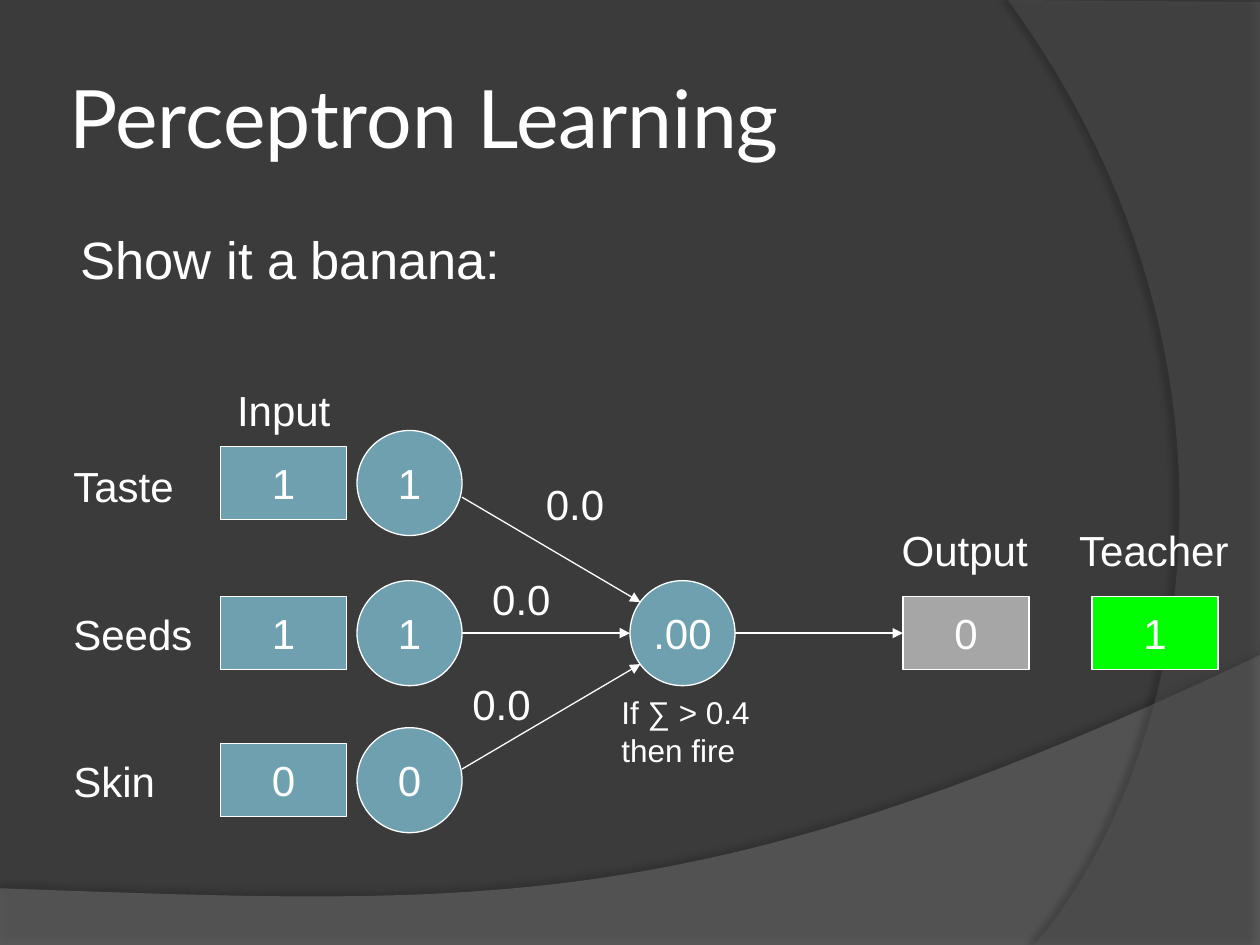
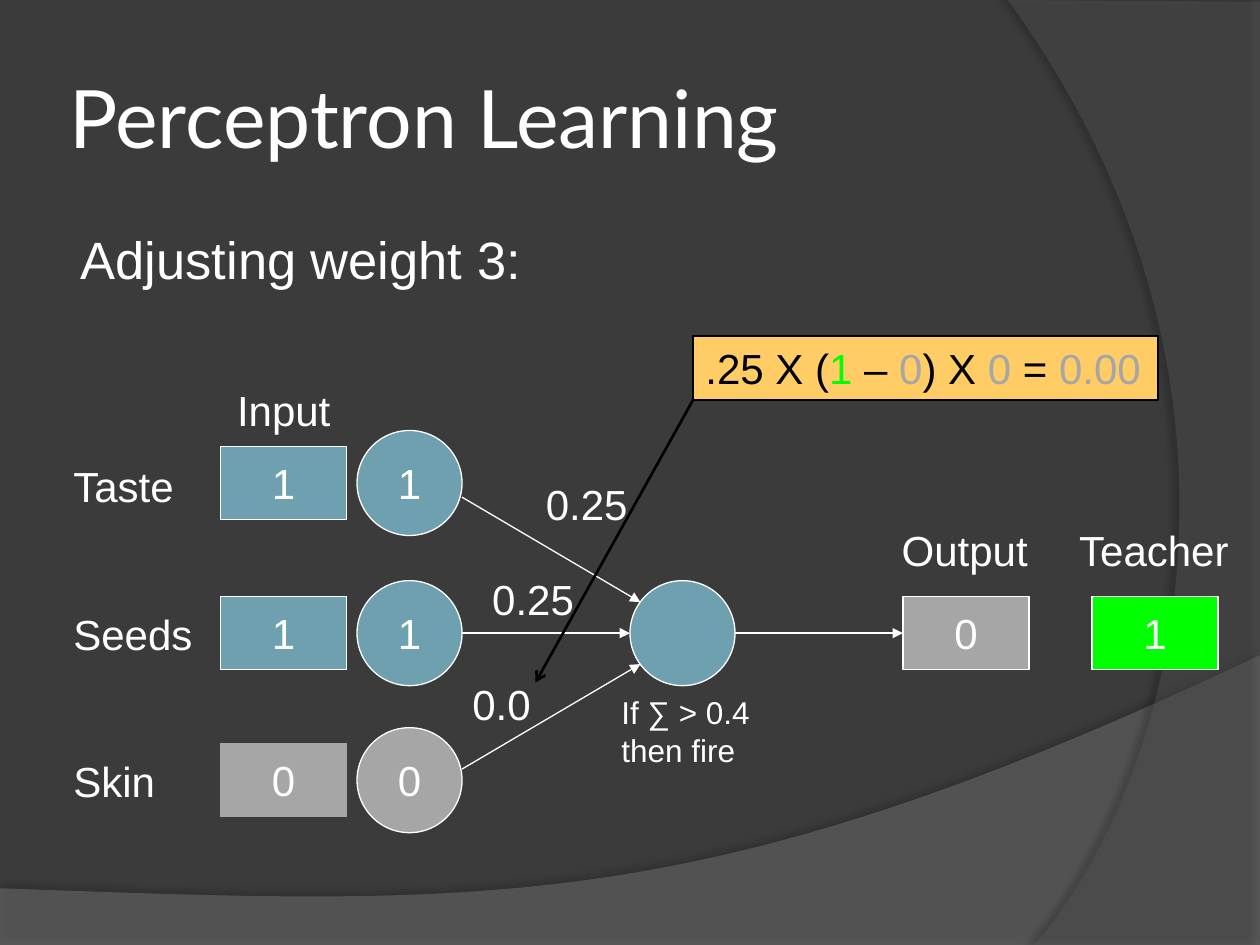
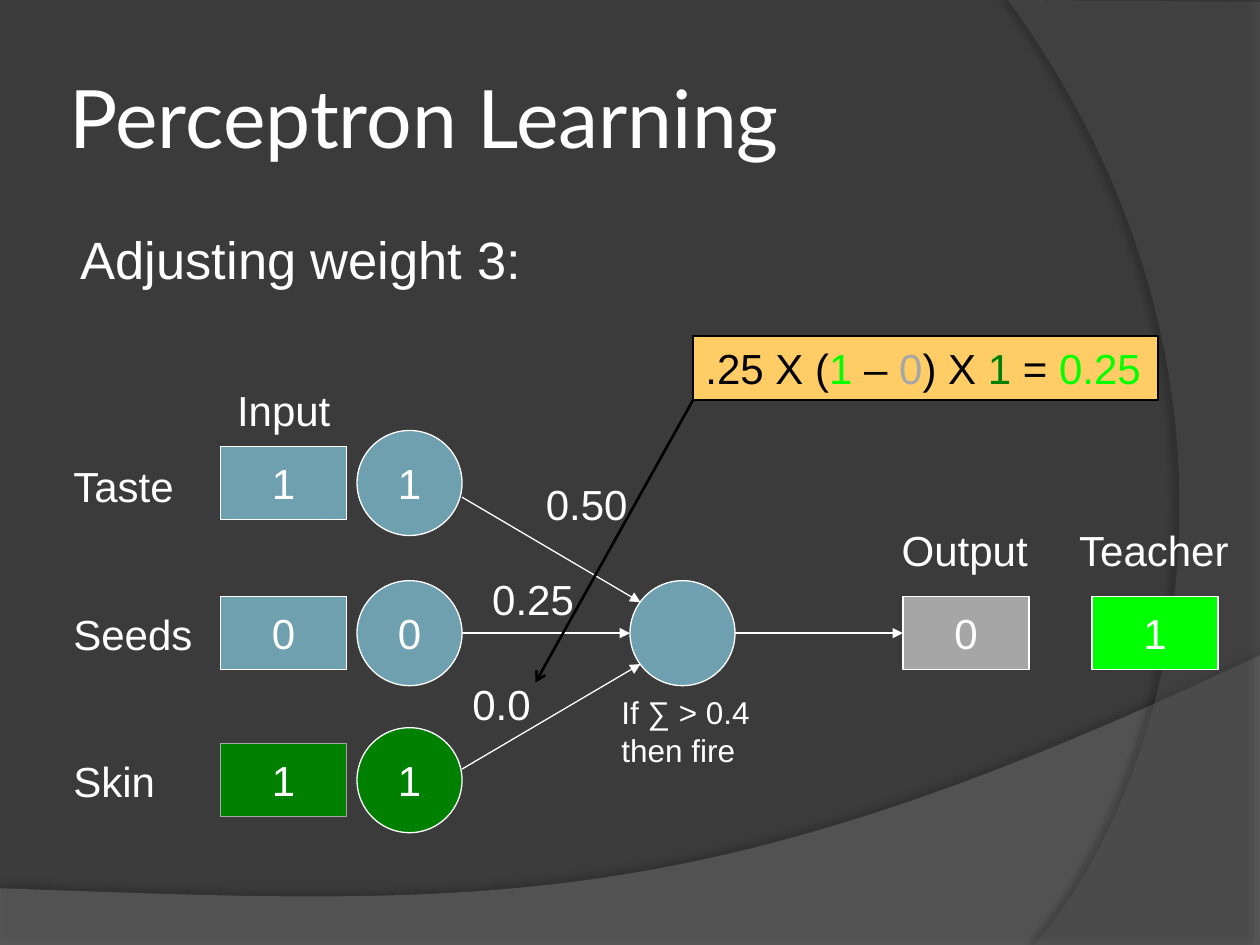
from dataclasses import dataclass

import pptx
import pptx.dml.color
import pptx.enum.dml
import pptx.enum.shapes
import pptx.enum.text
import pptx.oxml
import pptx.oxml.ns
import pptx.util

SHAPES = pptx.enum.shapes.MSO_SHAPE
ALIGN = pptx.enum.text.PP_ALIGN
ANCHOR = pptx.enum.text.MSO_ANCHOR
AUTO_SIZE = pptx.enum.text.MSO_AUTO_SIZE


@dataclass(frozen=True)
class Theme:
    background: str = "3B3B3B"
    lower_band: str = "7C7C7C"
    right_band: str = "595959"
    white: str = "FFFFFF"
    black: str = "000000"
    node: str = "6EA0B0"
    off: str = "A6A6A6"
    on: str = "00FF00"
    active: str = "008000"
    note: str = "FFCC66"
    title_font: str = "Lato"
    body_font: str = "Arial"
    title_size: int = 46
    body_size: int = 30
    label_size: int = 24
    small_size: int = 18
    thin: float = 0.75
    thick: float = 1.5


# Grid of 120 columns by 90 rows: one cell is a twelfth of an inch
COLUMNS, ROWS = 120, 90
CELL = pptx.util.Inches(1) // 12


def cells(*lengths):
    return [round(length * CELL) for length in lengths]


def rgb(colour):
    return pptx.dml.color.RGBColor.from_string(colour)


def add_xml(parent, xml):
    """Append a drawing element written without its namespace declaration."""
    tag, rest = xml[:-1].split(" ", 1) if " " in xml else (xml[:-2], "/")
    namespace = pptx.oxml.ns.nsdecls("a")
    element = pptx.oxml.parse_xml(f"{tag} {namespace} {rest}>")
    parent.append(element)
    return element


def curve(start, first, second, end, steps=48):
    """Points along a cubic curve, without its start."""
    points = []
    for step in range(1, steps + 1):
        t = step / steps
        weights = ((1 - t) ** 3, 3 * t * (1 - t) ** 2, 3 * t * t * (1 - t), t ** 3)
        points.append(tuple(
            sum(weight * point[axis] for weight, point
                in zip(weights, (start, first, second, end)))
            for axis in (0, 1)))
    return points


class Deck:
    def __init__(self, theme):
        self.theme = theme
        self.presentation = pptx.Presentation()
        self.presentation.slide_width, self.presentation.slide_height = cells(COLUMNS, ROWS)
        self.master = self.presentation.slide_master
        fill = self.master.background.fill
        fill.solid()
        fill.fore_color.rgb = rgb(theme.background)
        self.slide = None

    def new_slide(self, title, lead):
        layout = self.presentation.slide_layouts.get_by_name("Title and Content")
        self.slide = self.presentation.slides.add_slide(layout)
        self.placeholder(self.slide.shapes.title, title, (6, 3.6, 98, 15),
                         self.theme.title_size, self.theme.title_font)
        frame = self.slide.shapes.title.text_frame
        frame.vertical_anchor = ANCHOR.MIDDLE
        frame.margin_left = frame.margin_right = pptx.util.Inches(0.05)
        body = self.slide.placeholders[1]
        self.placeholder(body, lead, (6, 21, 98, 59.4), self.theme.body_size)
        properties = body.text_frame.paragraphs[0]._p.get_or_add_pPr()
        properties.set("marL", str(pptx.util.Inches(0.46)))
        properties.set("indent", str(pptx.util.Inches(-0.42)))
        properties.insert(0, add_xml(properties, "<a:buNone/>"))

    def placeholder(self, shape, text, box, size, font=None):
        shape.left, shape.top, shape.width, shape.height = cells(*box)
        shape.text_frame.text = text
        shape.text_frame.auto_size = AUTO_SIZE.NONE
        paragraph = shape.text_frame.paragraphs[0]
        paragraph.alignment = ALIGN.LEFT
        self.style(paragraph, size, font=font)

    def style(self, paragraph, size, colour=None, font=None):
        paragraph.font.size = pptx.util.Pt(size)
        paragraph.font.name = font or self.theme.body_font
        paragraph.font.color.rgb = rgb(colour or self.theme.white)

    def paint(self, shape, fill, line):
        shape.shadow.inherit = False
        shape.fill.solid()
        shape.fill.fore_color.rgb = rgb(fill)
        shape.line.color.rgb = rgb(line or self.theme.white)
        shape.line.width = pptx.util.Pt(self.theme.thin)

    def node(self, kind, box, text, fill, line=None):
        shape = self.slide.shapes.add_shape(kind, *cells(*box))
        self.paint(shape, fill, line)
        if text:
            frame = shape.text_frame
            frame.text = text
            frame.word_wrap = False
            frame.vertical_anchor = ANCHOR.MIDDLE
            frame.paragraphs[0].alignment = ALIGN.CENTER
            self.style(frame.paragraphs[0], self.theme.label_size)
        return shape

    def label(self, lines, left, top, width, height=6, size=None):
        box = self.slide.shapes.add_textbox(*cells(left, top, width, height))
        frame = box.text_frame
        frame.text = "\n".join(lines)
        frame.word_wrap = False
        frame.auto_size = AUTO_SIZE.SHAPE_TO_FIT_TEXT
        for paragraph in frame.paragraphs:
            self.style(paragraph, size or self.theme.label_size)

    def formula(self, parts, box):
        shape = self.slide.shapes.add_shape(SHAPES.RECTANGLE, *cells(*box))
        self.paint(shape, self.theme.note, self.theme.black)
        frame = shape.text_frame
        frame.word_wrap = False
        frame.auto_size = AUTO_SIZE.SHAPE_TO_FIT_TEXT
        frame.vertical_anchor = ANCHOR.TOP
        paragraph = frame.paragraphs[0]
        paragraph.alignment = ALIGN.LEFT
        self.style(paragraph, self.theme.label_size, self.theme.black)
        for text, colour in parts:
            run = paragraph.add_run()
            run.text = text
            run.font.color.rgb = rgb(colour)

    def arrow(self, start, end, colour=None, width=None, head="triangle"):
        connector = self.slide.shapes.add_connector(
            pptx.enum.shapes.MSO_CONNECTOR.STRAIGHT, *cells(*start, *end))
        connector.line.color.rgb = rgb(colour or self.theme.white)
        connector.line.width = pptx.util.Pt(width or self.theme.thin)
        add_xml(connector.line._get_or_add_ln(), f'<a:tailEnd type="{head}"/>')
        add_xml(connector._element.spPr, "<a:effectLst/>")
        return connector

    def master_band(self, points, colour, opacity, shadow):
        """Draw a translucent band and move it behind everything on the master."""
        builder = self.slide.shapes.build_freeform(*cells(*points[0]))
        builder.add_line_segments([cells(*point) for point in points[1:]])
        band = builder.convert_to_shape()
        band.fill.solid()
        band.fill.fore_color.rgb = rgb(colour)
        band.line.fill.background()
        fill = band._element.spPr.find(pptx.oxml.ns.qn("a:solidFill"))
        add_xml(fill[0], f'<a:alpha val="{opacity * 1000}"/>')
        band.shadow.inherit = False
        effects = band._element.spPr.find(pptx.oxml.ns.qn("a:effectLst"))
        alpha, blur, distance, direction = shadow
        outer = add_xml(effects, f'<a:outerShdw blurRad="{pptx.util.Pt(blur)}" '
                        f'dist="{pptx.util.Pt(distance)}" dir="{direction * 60000}" '
                        'algn="ctr" rotWithShape="0"/>')
        black = add_xml(outer, f'<a:srgbClr val="{self.theme.black}"/>')
        add_xml(black, f'<a:alpha val="{alpha * 1000}"/>')
        tree = self.master.shapes.element
        first = self.master.shapes[0].element
        tree.insert(tree.index(first), band.element)

    def bands(self):
        lower = [(0, 84.6), (0, ROWS), (COLUMNS, ROWS), (COLUMNS, 62.4)]
        lower += curve(lower[-1], (67.1, 87.5), (46.9, 86.3), lower[0])
        right = [(COLUMNS, 0.2), (COLUMNS, ROWS), (98.5, ROWS)]
        right += curve(right[-1], (112.2, 74.3), (122.2, 36), (96, 0))
        right.append(right[0])
        # Each later band goes in just behind the first master placeholder
        self.master_band(lower, self.theme.lower_band, 45, (35, 4, 3.5, 270))
        first_band_end = self.master.shapes[0].element
        self.master_band(right, self.theme.right_band, 40, (45, 4, 4, 180))
        self.master.shapes[0].element.addprevious(first_band_end)


# Perceptron geometry in cells
FEATURES = ("Taste", "Seeds", "Skin")
FEATURE_WIDTHS = (12.4, 13.8, 10.2)
CENTRES = (46, 60.3, 74.3)
MIDDLE = CENTRES[1]
WEIGHT_PLACES = ((50.8, 45), (45.7, 54), (43.8, 64))
DIAMETER, BOX_WIDTH, BOX_HEIGHT = 10, 12, 7
INPUT_LEFT, NEURON_LEFT, SUM_LEFT, OUTPUT_LEFT, TEACHER_LEFT = 21, 34, 60, 86, 104


def box_at(left, centre):
    return left, centre - BOX_HEIGHT / 2, BOX_WIDTH, BOX_HEIGHT


def circle_at(left, centre):
    return left, centre - DIAMETER / 2, DIAMETER, DIAMETER


def draw_perceptron(deck, inputs, weights, total, skin_fill, skin_line):
    theme = deck.theme
    fills = (theme.node, theme.node, skin_fill)
    lines = (theme.white, theme.white, skin_line)

    # Feature rows: name, input box, input neuron
    for row, (feature, centre) in enumerate(zip(FEATURES, CENTRES)):
        deck.label([feature], 5.8, 43.3 + 14.05 * row, FEATURE_WIDTHS[row])
        deck.node(SHAPES.RECTANGLE, box_at(INPUT_LEFT, centre),
                  inputs[row], fills[row], lines[row])
        deck.node(SHAPES.OVAL, circle_at(NEURON_LEFT, centre), inputs[row], fills[row])

    # Summing neuron, output and teacher
    deck.node(SHAPES.OVAL, circle_at(SUM_LEFT, MIDDLE), total, theme.node)
    output = deck.node(SHAPES.RECTANGLE, box_at(OUTPUT_LEFT, MIDDLE), "0", theme.off)
    deck.node(SHAPES.RECTANGLE, box_at(TEACHER_LEFT, MIDDLE), "1", theme.on)

    # Connections
    neuron_right = NEURON_LEFT + DIAMETER
    for side in (-1, 1):
        deck.arrow((neuron_right, MIDDLE + side * 12.95), (61, MIDDLE + side * 2.95))
    deck.arrow((neuron_right, MIDDLE), (SUM_LEFT, MIDDLE))
    firing = deck.arrow((SUM_LEFT + DIAMETER, MIDDLE), (OUTPUT_LEFT, MIDDLE))
    firing.end_connect(output, 1)

    # Captions and weights
    deck.label(["Input"], 21.4, 36, 11.3)
    deck.label(["Output"], 84.7, 49.4, 14.4)
    deck.label(["Teacher"], 101.6, 49.4, 16.8)
    deck.label(["If ∑ > 0.4", "then fire"], 58, 65.4, 16.4, 8.4, theme.small_size)
    for weight, place in zip(weights, WEIGHT_PLACES):
        deck.label([weight], *place, 8 if len(weight) == 3 else 10.3)


def draw_adjustment(deck, value, value_colour, change, change_colour):
    theme = deck.theme
    deck.formula([(".25 X (", theme.black), ("1 ", theme.on), ("– ", theme.black),
                  ("0", theme.off), (") X ", theme.black), (f"{value} ", value_colour),
                  ("= ", theme.black), (change, change_colour)], (66, 32, 44.3, 6.1))
    deck.arrow((66, 38.1), (51, 65), theme.black, theme.thick, "arrow")


def main():
    theme = Theme()
    deck = Deck(theme)
    title = "Perceptron Learning"

    # Slide 1: first example, with the shared bands
    deck.new_slide(title, "Show it a banana:")
    deck.bands()
    draw_perceptron(deck, "110", ("0.0", "0.0", "0.0"), ".00", theme.node, theme.white)

    # Slide 2: third weight, inactive input
    deck.new_slide(title, "Adjusting weight 3:")
    draw_perceptron(deck, "110", ("0.25", "0.25", "0.0"), "", theme.off, theme.off)
    draw_adjustment(deck, "0", theme.off, "0.00", theme.off)

    # Slide 3: third weight, active input
    deck.new_slide(title, "Adjusting weight 3:")
    draw_perceptron(deck, "101", ("0.50", "0.25", "0.0"), "", theme.active, theme.off)
    draw_adjustment(deck, "1", theme.active, "0.25", theme.on)

    deck.presentation.save("out.pptx")


if __name__ == "__main__":
    main()
